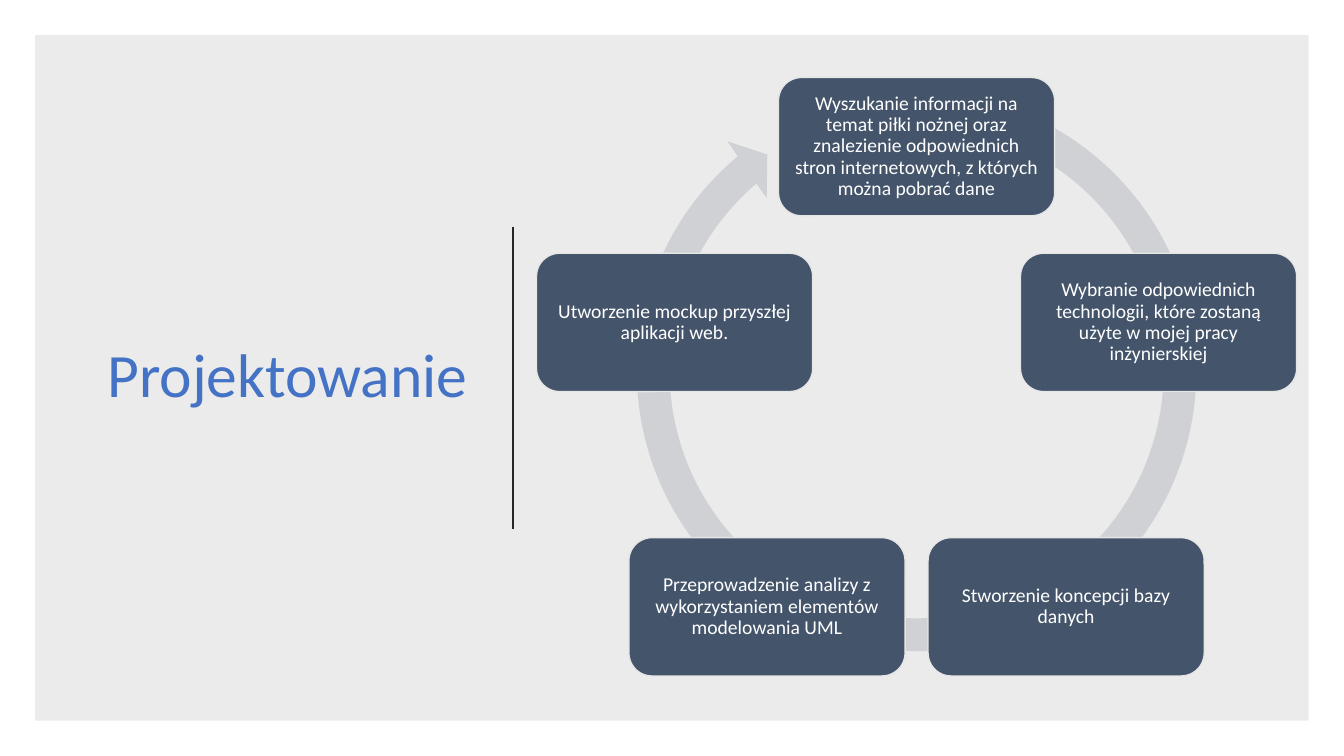
import math
from dataclasses import dataclass

from lxml import etree
from pptx import Presentation
from pptx import util as u
from pptx.dml import color
from pptx.enum import shapes, text
from pptx.oxml import ns

WIDE, HIGH = u.Inches(13.33), u.Inches(7.5)


# Colours and type sizes
@dataclass(frozen=True)
class Theme:
    font: str = "Calibri"
    head: int = 44
    body: int = 14
    blue: str = "4472C4"
    slate: str = "44546A"
    edge: str = "E7E6E6"
    ring: str = "CFD1D4"
    rule: str = "262626"
    veil: str = "000000"
    white: str = "FFFFFF"


LOOK = Theme()
STEPS = [
    "Wyszukanie informacji na temat piłki nożnej oraz znalezienie odpowiednich "
    "stron internetowych, z których można pobrać dane",
    "Wybranie odpowiednich technologii, które zostaną użyte w mojej pracy inżynierskiej",
    "Stworzenie koncepcji bazy danych",
    "Przeprowadzenie analizy z wykorzystaniem elementów modelowania UML",
    "Utworzenie mockup przyszłej aplikacji web.",
]

# Cycle layout, as shares of the slide
MID_X = 0.682 * WIDE
MID_Y = 0.5305 * HIGH
ORBIT = 0.3365 * HIGH
BOX_W, BOX_H = 0.2055 * WIDE, 0.183 * HIGH
RING_Y = 0.4913 * HIGH
RING_D = 0.788 * HIGH


def rgb(code):
    return color.RGBColor.from_string(code)


def write(frame, words, size, tint, align):
    frame.word_wrap = True
    frame.auto_size = text.MSO_AUTO_SIZE.NONE
    frame.vertical_anchor = text.MSO_ANCHOR.MIDDLE
    para = frame.paragraphs[0]
    para.alignment = align
    para.line_spacing = 0.9
    run = para.add_run()
    run.text = words
    run.font.name = LOOK.font
    run.font.size = u.Pt(size)
    run.font.color.rgb = rgb(tint)
    return para


def block(slide, kind, mid, size, fill):
    """Add a plain filled shape centred on a point."""
    (x, y), (w, h) = mid, size
    box = slide.shapes.add_shape(
        kind, round(x - w / 2), round(y - h / 2), round(w), round(h))
    box.shadow.inherit = False
    box.fill.solid()
    box.fill.fore_color.rgb = rgb(fill)
    box.line.fill.background()
    return box


def panel(slide):
    gap = u.Inches(0.35)
    box = block(slide, shapes.MSO_SHAPE.RECTANGLE, (WIDE / 2, HIGH / 2),
                (WIDE - 2 * gap, HIGH - 2 * gap), LOOK.veil)
    tint = box.fill._xPr.find(".//" + ns.qn("a:srgbClr"))
    etree.SubElement(tint, ns.qn("a:alpha"), val="8000")
    # Send behind the title
    slide.shapes._spTree.insert(2, box._element)


def title(slide, words):
    head = slide.shapes.title
    head.left, head.top = round(0.069 * WIDE), round(0.14 * HIGH)
    head.width, head.height = round(0.2866 * WIDE), round(0.72 * HIGH)
    write(head.text_frame, words, LOOK.head, LOOK.blue, text.PP_ALIGN.RIGHT)


def rule(slide):
    x = round(0.3818 * WIDE)
    line = slide.shapes.add_connector(
        shapes.MSO_CONNECTOR.STRAIGHT, x, round(0.3 * HIGH), x, round(0.7 * HIGH))
    line.line.color.rgb = rgb(LOOK.rule)
    line.line.width = u.Pt(1.5)
    etree.SubElement(line._element.spPr, ns.qn("a:effectLst"))


def ring(slide):
    arc = block(slide, shapes.MSO_SHAPE.CIRCULAR_ARROW, (MID_X, RING_Y),
                (RING_D, RING_D), LOOK.ring)
    # Band width, head angle, end angle, start angle, head width
    for i, val in enumerate((0.055, 3.31, 137.97, 173.73, 0.058)):
        arc.adjustments[i] = val


def step(slide, words, turn):
    mid = MID_X + ORBIT * math.sin(turn), MID_Y - ORBIT * math.cos(turn)
    box = block(slide, shapes.MSO_SHAPE.ROUNDED_RECTANGLE, mid,
                (BOX_W, BOX_H), LOOK.slate)
    box.line.color.rgb = rgb(LOOK.edge)
    box.line.width = u.Pt(1)
    frame = box.text_frame
    frame.margin_left = frame.margin_right = u.Inches(0.06)
    frame.margin_top = frame.margin_bottom = u.Inches(0.06)
    para = write(frame, words, LOOK.body, LOOK.white, text.PP_ALIGN.CENTER)
    para.space_after = u.Pt(5)


def main():
    deck = Presentation()
    deck.slide_width, deck.slide_height = WIDE, HIGH
    slide = deck.slides.add_slide(deck.slide_layouts.get_by_name("Title Only"))

    # Left side
    panel(slide)
    title(slide, "Projektowanie")
    rule(slide)

    # Cycle, clockwise from the top
    ring(slide)
    for i, words in enumerate(STEPS):
        step(slide, words, math.tau * i / len(STEPS))

    deck.save("out.pptx")


if __name__ == "__main__":
    main()
